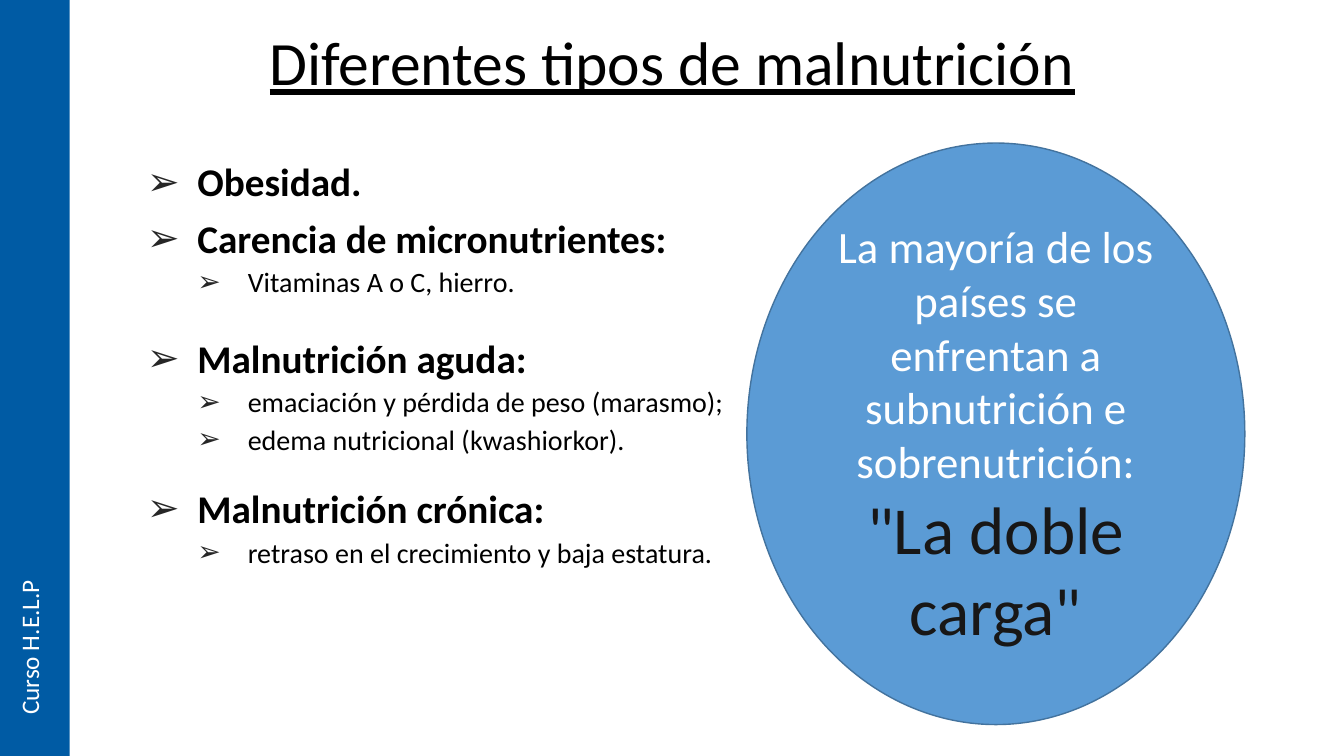
from lxml.etree import SubElement
from pptx import Presentation
from pptx.dml.color import RGBColor
from pptx.enum.shapes import MSO_SHAPE
from pptx.enum.text import MSO_ANCHOR, PP_ALIGN
from pptx.oxml.ns import qn
from pptx.util import Pt

BLACK = RGBColor(0x00, 0x00, 0x00)
WHITE = RGBColor(0xFF, 0xFF, 0xFF)
DARK = RGBColor(0x18, 0x17, 0x17)
GREY = RGBColor(0x26, 0x26, 0x26)
SKY = RGBColor(0x5B, 0x9B, 0xD5)
EDGE = RGBColor(0x43, 0x73, 0x9E)
NAVY = RGBColor(0x00, 0x5B, 0xA4)


def write(text, frame, size, color=BLACK, bold=False, under=False,
          align=PP_ALIGN.LEFT, lead=1.0, before=0, level=None):
    para = frame.paragraphs[0]
    if para.runs:
        para = frame.add_paragraph()
    para.alignment = align
    para.line_spacing = lead
    para.space_before = Pt(before)
    run = para.add_run()
    run.text = text
    font = run.font
    font.name = "Calibri"
    font.size = Pt(size)
    font.bold = bold
    font.underline = under
    font.color.rgb = color
    if level is not None:
        para.level = level
        props = para._p.get_or_add_pPr()
        props.set("marL", str(Pt(36 * (level + 1))))
        props.set("indent", str(Pt(-36)))
        tint = SubElement(props, qn("a:buClr"))
        SubElement(tint, qn("a:srgbClr"), val=str(GREY))
        SubElement(props, qn("a:buFont"), typeface="Arial")
        SubElement(props, qn("a:buChar"), char="➢")


deck = Presentation()
deck.slide_width = Pt(960)
deck.slide_height = Pt(540)
slide = deck.slides.add_slide(deck.slide_layouts[6])
shapes = slide.shapes

title = shapes.add_textbox(Pt(124.6), Pt(-16.6), Pt(711.4), Pt(90.7)).text_frame
title.word_wrap = True
title.vertical_anchor = MSO_ANCHOR.BOTTOM
write("Diferentes tipos de malnutrición", title, 44, under=True,
      align=PP_ALIGN.CENTER, lead=0.9)

body = shapes.add_textbox(Pt(97.9), Pt(113), Pt(635), Pt(345.6)).text_frame
body.word_wrap = True
items = [
    ("Obesidad.", 0, 10),
    ("Carencia de micronutrientes:", 0, 10),
    ("Vitaminas A o C, hierro.", 1, 5),
    ("Malnutrición aguda:", 0, 28.8),
    ("emaciación y pérdida de peso (marasmo);", 1, 5),
    ("edema nutricional (kwashiorkor).", 1, 5),
    ("Malnutrición crónica:", 0, 23.8),
    ("retraso en el crecimiento y baja estatura.", 1, 5),
]
for text, level, gap in items:
    write(text, body, 20 if level else 28, bold=level == 0,
          lead=0.9, before=gap, level=level)

oval = shapes.add_shape(MSO_SHAPE.OVAL, Pt(533.5), Pt(102.2), Pt(355.7), Pt(415.4))
oval.shadow.inherit = False
oval.fill.solid()
oval.fill.fore_color.rgb = SKY
oval.line.color.rgb = EDGE
oval.line.width = Pt(1)
oval.text_frame.word_wrap = True
oval.text_frame.vertical_anchor = MSO_ANCHOR.MIDDLE
write("La mayoría de los países se enfrentan a subnutrición e sobrenutrición:",
      oval.text_frame, 32, color=WHITE, align=PP_ALIGN.CENTER)
write('"La doble carga"', oval.text_frame, 48, color=DARK, align=PP_ALIGN.CENTER)

bar = shapes.add_shape(MSO_SHAPE.RECTANGLE, Pt(0), Pt(0), Pt(49.7), Pt(540))
bar.shadow.inherit = False
bar.fill.solid()
bar.fill.fore_color.rgb = NAVY
bar.line.fill.background()

side = shapes.add_textbox(Pt(6.5), Pt(403.9), Pt(36), Pt(113.8)).text_frame
side.word_wrap = False
side._txBody.bodyPr.set("vert", "vert270")
write("Curso H.E.L.P", side, 18, color=WHITE)

deck.save("out.pptx")
